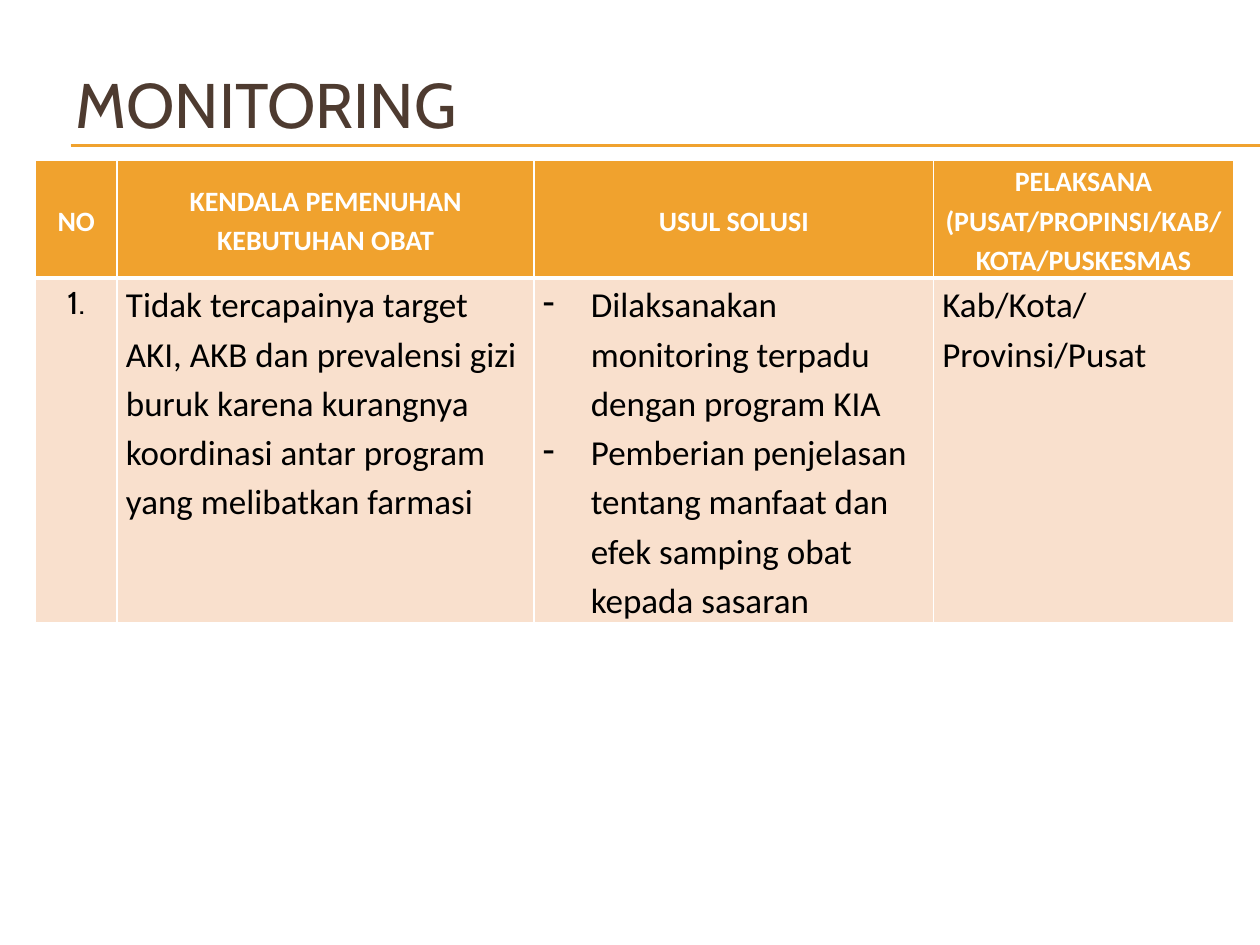
"""Build the monitoring slide: a ruled title above a table of obstacles and solutions."""
from lxml import etree
from pptx import Presentation, util as u
from pptx.dml.color import RGBColor
from pptx.enum import shapes, text
from pptx.oxml.ns import qn

TITLE = "MONITORING"
HEADERS = ["NO", "KENDALA PEMENUHAN KEBUTUHAN OBAT", "USUL SOLUSI",
           "PELAKSANA (PUSAT/PROPINSI/KAB/KOTA/PUSKESMAS"]
NUMBER = "1."
OBSTACLE = ("Tidak tercapainya target AKI, AKB dan prevalensi gizi buruk "
            "karena kurangnya koordinasi antar program yang melibatkan farmasi")
SOLUTIONS = ["Dilaksanakan monitoring terpadu dengan program KIA",
             "Pemberian penjelasan tentang manfaat dan efek samping obat kepada sasaran"]
ACTORS = "Kab/Kota/Provinsi/Pusat"
COLUMN_WIDTHS = [0.65, 3.31, 3.17, 2.38]
ROW_HEIGHTS = [0.88, 2.7]
RULE_HEIGHTS = [1.15, 1.16]
ORANGE, PEACH, BROWN, WHITE, BLACK = "F0A22E", "F9E0CD", "4E3B30", "FFFFFF", "000000"


def paint(color_format, color):
    color_format.rgb = RGBColor.from_string(color)


def style(paragraph, size, name, color, bold=False):
    font = paragraph.font
    font.size, font.name, font.bold = u.Pt(size), name, bold
    paint(font.color, color)


def add_rule(slide, top):
    rule = slide.shapes.add_connector(shapes.MSO_CONNECTOR.STRAIGHT, u.Inches(0.56),
                                      u.Inches(top), u.Inches(10), u.Inches(top))
    rule.line.width = u.Pt(0.75)
    paint(rule.line.color, ORANGE)
    etree.SubElement(rule._element.spPr, qn("a:effectLst"))


def set_borders(cell, widths):
    properties = cell._tc.get_or_add_tcPr()
    for index, (side, width) in enumerate(widths.items()):
        line = etree.Element(qn(f"a:ln{side}"), w=str(u.Pt(width)))
        fill = etree.SubElement(line, qn("a:solidFill"))
        etree.SubElement(fill, qn("a:srgbClr"), val=WHITE)
        properties.insert(index, line)


def add_dash(paragraph):
    properties = paragraph._p.get_or_add_pPr()
    properties.set("marL", str(u.Inches(0.38)))
    properties.set("indent", str(-u.Inches(0.38)))
    etree.SubElement(properties, qn("a:buFontTx"))
    etree.SubElement(properties, qn("a:buChar"), char="-")


def fill_cell(cell, lines, is_header):
    cell.fill.solid()
    paint(cell.fill.fore_color, ORANGE if is_header else PEACH)
    top, bottom = (1, 3) if is_header else (3, 1)
    set_borders(cell, {"L": 1, "R": 1, "T": top, "B": bottom})
    cell.text_frame.text = "\n".join(lines)
    is_number = lines == [NUMBER]
    if not is_number:
        cell.margin_left = cell.margin_right = u.Inches(0.07)
        cell.margin_top = cell.margin_bottom = 0
    cell.vertical_anchor = text.MSO_ANCHOR.MIDDLE if is_header else text.MSO_ANCHOR.TOP
    for paragraph in cell.text_frame.paragraphs:
        centred = is_header or is_number
        paragraph.alignment = text.PP_ALIGN.CENTER if centred else text.PP_ALIGN.LEFT
        if is_number:
            style(paragraph, 18, "Cabin", BLACK)
            continue
        paragraph.line_spacing = 1.15
        if is_header:
            style(paragraph, 16, "Calibri", WHITE, bold=True)
        else:
            style(paragraph, 20, "Calibri", BLACK)
        if lines == SOLUTIONS:
            add_dash(paragraph)


def add_title(slide):
    title = slide.shapes.title
    title.left, title.top, title.width, title.height = map(u.Inches, (0.5, 0.36, 9.5, 0.92))
    title.text_frame.text = TITLE
    title.text_frame.vertical_anchor = text.MSO_ANCHOR.MIDDLE
    paragraph = title.text_frame.paragraphs[0]
    paragraph.alignment = text.PP_ALIGN.LEFT
    style(paragraph, 36, "Cabin", BROWN)


def add_monitoring_table(slide):
    rows = [[[header] for header in HEADERS],
            [[NUMBER], [OBSTACLE], SOLUTIONS, [ACTORS]]]
    table = slide.shapes.add_table(
        len(rows), len(HEADERS), u.Inches(0.28), u.Inches(1.27),
        u.Inches(sum(COLUMN_WIDTHS)), u.Inches(sum(ROW_HEIGHTS))).table
    for column, width in zip(table.columns, COLUMN_WIDTHS):
        column.width = u.Inches(width)
    for row, height, contents in zip(table.rows, ROW_HEIGHTS, rows):
        row.height = u.Inches(height)
        for cell, lines in zip(row.cells, contents):
            fill_cell(cell, lines, contents is rows[0])


def main():
    presentation = Presentation()
    presentation.slide_width, presentation.slide_height = u.Inches(10), u.Inches(7.5)
    slide = presentation.slides.add_slide(presentation.slide_layouts[5])
    for top in RULE_HEIGHTS:
        add_rule(slide, top)
    add_title(slide)
    add_monitoring_table(slide)
    presentation.save("out.pptx")


if __name__ == "__main__":
    main()
